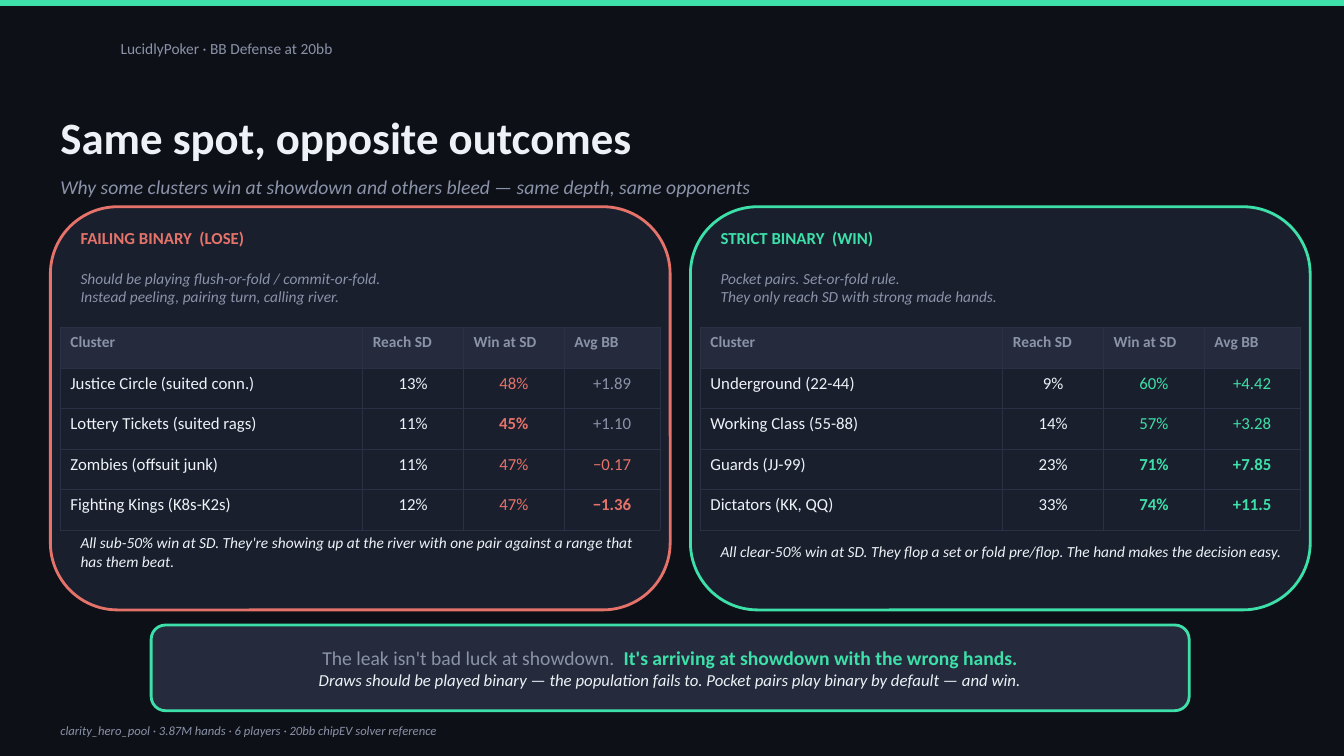
from lxml.etree import SubElement
from pptx import Presentation
from pptx.dml.color import RGBColor
from pptx.enum.shapes import MSO_SHAPE as Shape
from pptx.enum.text import MSO_ANCHOR as Anchor, MSO_AUTO_SIZE as AutoSize, PP_ALIGN as Align
from pptx.oxml.ns import qn
from pptx.util import Cm, Pt

BACKGROUND = RGBColor(0x0E, 0x10, 0x18)
PANEL = RGBColor(0x1A, 0x1F, 0x2E)
RAISED = RGBColor(0x25, 0x2B, 0x3D)
BORDER = RGBColor(0x2B, 0x31, 0x45)
MUTED = RGBColor(0x8A, 0x93, 0xA8)
LIGHT = RGBColor(0xEE, 0xF2, 0xF7)
RED = RGBColor(0xE5, 0x73, 0x6A)
GREEN = RGBColor(0x3D, 0xE0, 0xA8)
FONT = "Calibri"

RUNNING_HEAD = "LucidlyPoker · BB Defense at 20bb"
TITLE = "Same spot, opposite outcomes"
SUBTITLE = "Why some clusters win at showdown and others bleed — same depth, same opponents"
SOURCE = "clarity_hero_pool · 3.87M hands · 6 players · 20bb chipEV solver reference"
COLUMNS = ["Cluster", "Reach SD", "Win at SD", "Avg BB"]
PANELS = [
    {
        "heading": "FAILING BINARY  (LOSE)",
        "accent": RED,
        "gain": MUTED,
        "rule": ["Should be playing flush-or-fold / commit-or-fold.",
                 "Instead peeling, pairing turn, calling river."],
        "rows": [
            ("Justice Circle (suited conn.)", "13%", "48%", "+1.89"),
            ("Lottery Tickets (suited rags)", "11%", "45%", "+1.10"),
            ("Zombies (offsuit junk)", "11%", "47%", "−0.17"),
            ("Fighting Kings (K8s-K2s)", "12%", "47%", "−1.36"),
        ],
        "bold": {"45%", "−1.36"},
        "verdict": "All sub-50% win at SD. They're showing up at the river "
                   "with one pair against a range that has them beat.",
    },
    {
        "heading": "STRICT BINARY  (WIN)",
        "accent": GREEN,
        "gain": GREEN,
        "rule": ["Pocket pairs. Set-or-fold rule.",
                 "They only reach SD with strong made hands."],
        "rows": [
            ("Underground (22-44)", "9%", "60%", "+4.42"),
            ("Working Class (55-88)", "14%", "57%", "+3.28"),
            ("Guards (JJ-99)", "23%", "71%", "+7.85"),
            ("Dictators (KK, QQ)", "33%", "74%", "+11.5"),
        ],
        "bold": {"71%", "74%", "+7.85", "+11.5"},
        "verdict": "All clear-50% win at SD. They flop a set or fold pre/flop. "
                   "The hand makes the decision easy.",
    },
]
LEAK = "The leak isn't bad luck at showdown.  "
CAUSE = "It's arriving at showdown with the wrong hands."
LESSON = ("Draws should be played binary — the population fails to. "
          "Pocket pairs play binary by default — and win.")

# Lengths in centimetres
SLIDE_WIDTH, SLIDE_HEIGHT = 33.87, 19.05
MARGIN, CONTENT_WIDTH = 1.27, 31.24
PANEL_TOP, PANEL_WIDTH, PANEL_HEIGHT, PANEL_GAP = 5.21, 15.62, 10.16, 0.51
TEXT_INSET, TEXT_WIDTH = 0.51, 14.73
TABLE_INSET, TABLE_TOP, ROW_HEIGHT = 0.25, 8.26, 1.02
COLUMN_WIDTHS = [7.62, 2.54, 2.54, 2.41]


def set_font(target, size, color, bold=False, italic=False):
    font = target.font
    font.name, font.size = FONT, Pt(size)
    font.bold, font.italic = bold, italic
    font.color.rgb = color


def fill_text(frame, lines, size, color, **style):
    frame.word_wrap = True
    frame.auto_size = AutoSize.NONE
    frame.vertical_anchor = Anchor.MIDDLE
    for index, line in enumerate(lines):
        paragraph = frame.add_paragraph() if index else frame.paragraphs[0]
        paragraph.text = line
        paragraph.alignment = Align.LEFT
        set_font(paragraph, size, color, **style)


def add_text(slide, left, top, width, height, lines, size, color, **style):
    box = slide.shapes.add_textbox(Cm(left), Cm(top), Cm(width), Cm(height))
    fill_text(box.text_frame, lines, size, color, **style)


def add_box(slide, kind, left, top, width, height, fill, line=None):
    shape = slide.shapes.add_shape(kind, Cm(left), Cm(top), Cm(width), Cm(height))
    shape.shadow.inherit = False
    shape.fill.solid()
    shape.fill.fore_color.rgb = fill
    if line is None:
        shape.line.fill.background()
    else:
        shape.line.color.rgb = line
        shape.line.width = Pt(2)
    return shape


def add_borders(cell):
    properties = cell._tc.get_or_add_tcPr()
    for side in ("a:lnL", "a:lnR", "a:lnT", "a:lnB"):
        line = SubElement(properties, qn(side), w=str(Pt(0.5)))
        solid = SubElement(line, qn("a:solidFill"))
        SubElement(solid, qn("a:srgbClr"), val=str(BORDER))


def add_cluster_table(slide, left, panel):
    rows = [COLUMNS, *panel["rows"]]
    table = slide.shapes.add_table(
        len(rows), len(COLUMNS), Cm(left), Cm(TABLE_TOP),
        Cm(sum(COLUMN_WIDTHS)), Cm(ROW_HEIGHT * len(rows))).table
    table.first_row = table.horz_banding = False
    for column, width in zip(table.columns, COLUMN_WIDTHS):
        column.width = Cm(width)
    for row_index, values in enumerate(rows):
        average_color = panel["gain"] if values[3].startswith("+") else panel["accent"]
        colors = [LIGHT, LIGHT, panel["accent"], average_color]
        for column_index, value in enumerate(values):
            cell = table.cell(row_index, column_index)
            add_borders(cell)
            paragraph = cell.text_frame.paragraphs[0]
            paragraph.text = value
            if row_index == 0:
                cell.fill.solid()
                cell.fill.fore_color.rgb = RAISED
                set_font(paragraph, 11, MUTED, bold=True)
            else:
                cell.fill.background()
                paragraph.alignment = Align.CENTER if column_index else Align.LEFT
                set_font(paragraph, 12, colors[column_index], bold=value in panel["bold"])


def add_panel(slide, left, panel):
    accent, text_left = panel["accent"], left + TEXT_INSET
    add_box(slide, Shape.ROUNDED_RECTANGLE, left, PANEL_TOP, PANEL_WIDTH, PANEL_HEIGHT,
            PANEL, accent)
    add_text(slide, text_left, 5.54, TEXT_WIDTH, 0.89, [panel["heading"]], 12, accent, bold=True)
    add_text(slide, text_left, 6.48, TEXT_WIDTH, 1.52, panel["rule"], 11, MUTED, italic=True)
    add_cluster_table(slide, left + TABLE_INSET, panel)
    add_text(slide, text_left, 12.7, TEXT_WIDTH, 2.41, [panel["verdict"]], 11, LIGHT, italic=True)


def add_takeaway(slide):
    box = add_box(slide, Shape.ROUNDED_RECTANGLE, 3.81, 15.75, 26.16, 2.16, RAISED, GREEN)
    frame = box.text_frame
    fill_text(frame, ["", LESSON], 12, LIGHT, italic=True)
    for paragraph in frame.paragraphs:
        paragraph.alignment = Align.CENTER
    for text, color, bold in ((LEAK, MUTED, False), (CAUSE, GREEN, True)):
        run = frame.paragraphs[0].add_run()
        run.text = text
        set_font(run, 14, color, bold=bold)


def main():
    presentation = Presentation()
    presentation.slide_width, presentation.slide_height = Cm(SLIDE_WIDTH), Cm(SLIDE_HEIGHT)
    slide = presentation.slides.add_slide(presentation.slide_layouts[5])
    slide.background.fill.solid()
    slide.background.fill.fore_color.rgb = BACKGROUND

    add_box(slide, Shape.RECTANGLE, 0, 0, SLIDE_WIDTH, 0.15, GREEN)
    add_text(slide, 2.79, 0.64, 20.32, 1.14, [RUNNING_HEAD], 11, MUTED)
    title = slide.shapes.title
    title.left, title.top = Cm(MARGIN), Cm(2.54)
    title.width, title.height = Cm(CONTENT_WIDTH), Cm(1.78)
    fill_text(title.text_frame, [TITLE], 32, LIGHT, bold=True)
    add_text(slide, MARGIN, 4.19, CONTENT_WIDTH, 1.02, [SUBTITLE], 14, MUTED, italic=True)

    for index, panel in enumerate(PANELS):
        add_panel(slide, MARGIN + index * (PANEL_WIDTH + PANEL_GAP), panel)
    add_takeaway(slide)
    add_text(slide, MARGIN, 17.91, CONTENT_WIDTH, 1.02, [SOURCE], 9, MUTED, italic=True)
    presentation.save("out.pptx")


if __name__ == "__main__":
    main()
